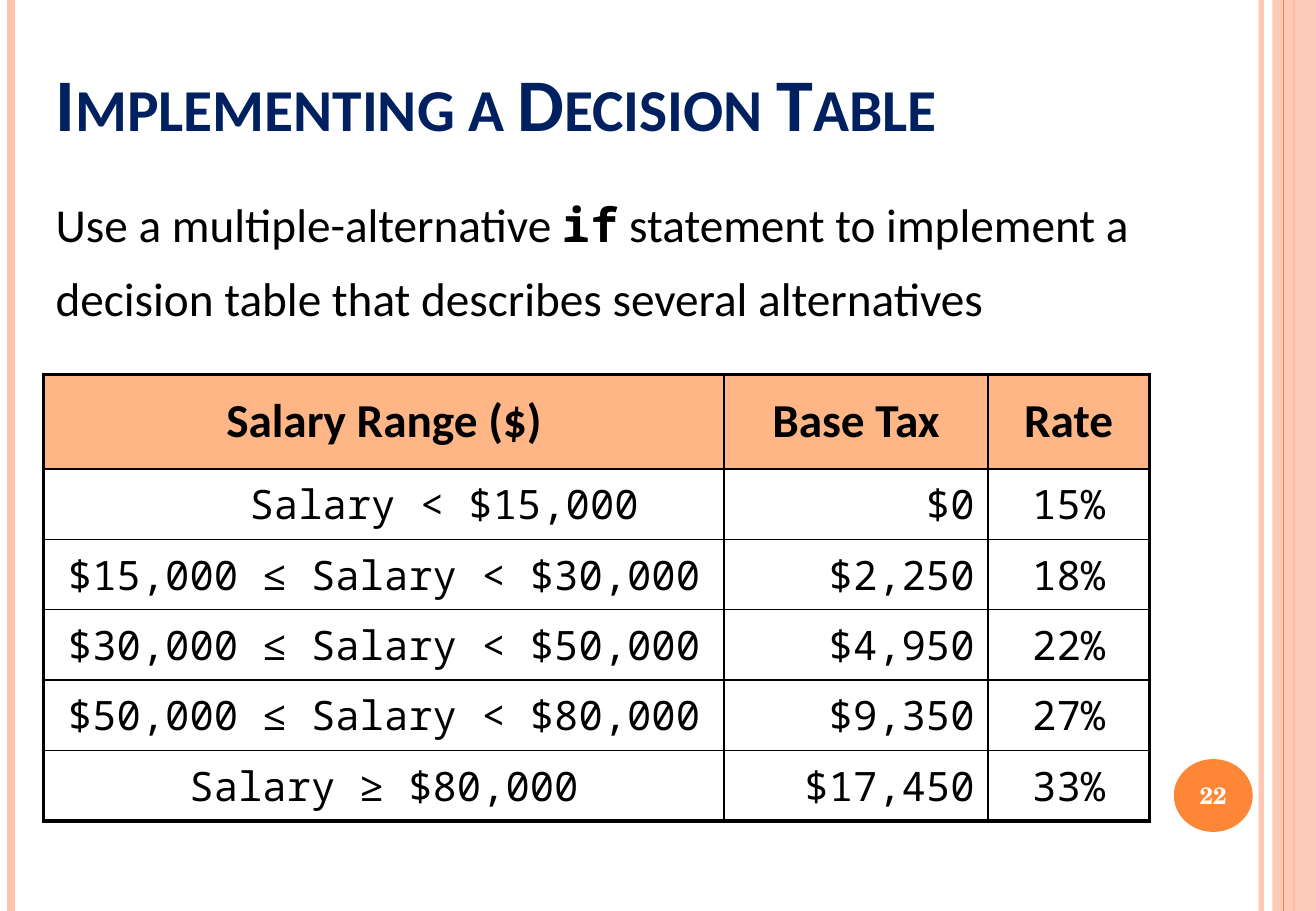
from dataclasses import dataclass

from lxml import etree
from pptx import Presentation
from pptx.dml.color import RGBColor
from pptx.enum.shapes import MSO_CONNECTOR as Connector, MSO_SHAPE as Shape
from pptx.enum.text import MSO_ANCHOR as Anchor, PP_ALIGN as Align
from pptx.oxml.ns import qn
from pptx.util import Inches, Pt


@dataclass(frozen=True)
class Theme:
    ink: str = "000000"
    paper: str = "FFFFFF"
    navy: str = "002060"
    orange: str = "FE8637"
    blush: str = "FEC3AE"
    peach: str = "FEB687"
    sans: str = "Calibri"
    mono: str = "Noto Sans Mono"
    serif: str = "TeX Gyre Schola"
    title_size: float = 44
    body_size: float = 28
    entry_size: float = 24
    number_size: float = 14
    outer_rule: float = 2.25
    inner_rule: float = 1


THEME = Theme()
WIDTH, HEIGHT = Inches(10.83), Inches(7.5)
LEFT = 3.32  # shared left edge, percent of the width

HEADINGS = ["Salary Range ($)", "Base Tax", "Rate"]
BRACKETS = [
    ("Salary < $15,000", "$0", "15%"),
    ("$15,000 ≤ Salary < $30,000", "$2,250", "18%"),
    ("$30,000 ≤ Salary < $50,000", "$4,950", "22%"),
    ("$50,000 ≤ Salary < $80,000", "$9,350", "27%"),
    ("Salary ≥ $80,000", "$17,450", "33%"),
]
COLUMN_SHARES = [51.71, 20.04, 12.28]
COLUMN_ALIGNS = [Align.CENTER, Align.RIGHT, Align.CENTER]
HEADING_SHARE, BRACKET_SHARE = 10.4, 7.73
FIRST_RANGE_INDENT = Inches(1.1)


def across(percent):
    return round(WIDTH * percent / 100)


def down(percent):
    return round(HEIGHT * percent / 100)


def area(left, top, width, height):
    return across(left), down(top), across(width), down(height)


def style(run, font, size, color, bold=False):
    run.font.name, run.font.size, run.font.bold = font, Pt(size), bold
    run.font.color.rgb = RGBColor.from_string(color)


def set_opacity(fill_owner, percent):
    color = next(fill_owner.iter(qn("a:srgbClr")))
    etree.SubElement(color, qn("a:alpha")).set("val", str(percent * 1000))


def add_stripe(slide, x, color, weight, opacity=100):
    """Vertical line over the full height of the slide."""
    stripe = slide.shapes.add_connector(
        Connector.STRAIGHT, across(x), 0, across(x), HEIGHT)
    stripe.line.color.rgb = RGBColor.from_string(color)
    stripe.line.width = Pt(weight)
    properties = stripe._element.spPr
    if opacity < 100:
        set_opacity(properties, opacity)
    etree.SubElement(properties, qn("a:effectLst"))


def add_solid(slide, kind, place, color):
    solid = slide.shapes.add_shape(kind, *area(*place))
    solid.shadow.inherit = False
    solid.fill.solid()
    solid.fill.fore_color.rgb = RGBColor.from_string(color)
    solid.line.fill.background()
    return solid


def add_paragraph_box(slide, place, anchor=Anchor.TOP):
    frame = slide.shapes.add_textbox(*area(*place)).text_frame
    frame.word_wrap = True
    frame.vertical_anchor = anchor
    return frame.paragraphs[0]


def add_decoration(slide):
    add_stripe(slide, 95.84, THEME.blush, 3, opacity=93)
    add_stripe(slide, 0.83, THEME.blush, 4.5)
    add_stripe(slide, 98.34, THEME.orange, 1.5)
    band = add_solid(slide, Shape.RECTANGLE, (96.68, 0, LEFT, 100), THEME.blush)
    set_opacity(band._element.spPr, 87)
    add_stripe(slide, 97.51, THEME.orange, 0.75)


def add_slide_number(slide, number):
    badge = add_solid(slide, Shape.OVAL, (89.2, 83.33, 6, 8), THEME.orange)
    frame = badge.text_frame
    frame.margin_left = frame.margin_right = 0
    frame.vertical_anchor = Anchor.MIDDLE
    label = frame.paragraphs[0]
    label.text = number
    label.alignment = Align.CENTER
    style(label.runs[0], THEME.serif, THEME.number_size, THEME.paper, bold=True)


def add_title(slide, wording):
    title = add_paragraph_box(slide, (LEFT, 4, 81.72, 12.67), Anchor.BOTTOM)
    title.text = wording
    style(title.runs[0], THEME.sans, THEME.title_size, THEME.navy, bold=True)
    title.runs[0].font._element.set("cap", "small")


def add_statement(slide, before, keyword, after):
    statement = add_paragraph_box(slide, (LEFT, 18.93, 88.37, 18.93))
    statement.line_spacing, statement.space_before = 1.3, Pt(6)
    for wording in (before, keyword, after):
        run = statement.add_run()
        run.text = wording
        is_code = wording == keyword
        style(run, THEME.mono if is_code else THEME.sans,
              THEME.body_size, THEME.ink, bold=is_code)


def set_borders(cell, outer_sides):
    """Rule all four sides, heavier on the rim of the table."""
    properties = cell._tc.get_or_add_tcPr()
    for order, side in enumerate("LRTB"):
        weight = THEME.outer_rule if side in outer_sides else THEME.inner_rule
        rule = etree.Element(qn(f"a:ln{side}"), w=str(Pt(weight)))
        ink = etree.SubElement(rule, qn("a:solidFill"))
        etree.SubElement(ink, qn("a:srgbClr")).set("val", THEME.ink)
        properties.insert(order, rule)


def fill_cell(cell, wording, align, is_heading):
    cell.text = wording
    cell.vertical_anchor = Anchor.MIDDLE
    cell.margin_left = cell.margin_right = Inches(0.11)
    entry = cell.text_frame.paragraphs[0]
    if is_heading:
        entry.alignment = Align.CENTER
        style(entry.runs[0], THEME.sans, THEME.body_size, THEME.ink, bold=True)
        cell.fill.solid()
        cell.fill.fore_color.rgb = RGBColor.from_string(THEME.peach)
    else:
        entry.alignment = align
        style(entry.runs[0], THEME.mono, THEME.entry_size, THEME.ink)
        cell.fill.background()


def add_tax_table(slide):
    entries = [HEADINGS, *BRACKETS]
    row_shares = [HEADING_SHARE] + [BRACKET_SHARE] * len(BRACKETS)
    place = (LEFT, 41.07, sum(COLUMN_SHARES), sum(row_shares))
    taxes = slide.shapes.add_table(
        len(entries), len(HEADINGS), *area(*place)).table
    taxes.first_row = taxes.horz_banding = False
    for column, share in zip(taxes.columns, COLUMN_SHARES):
        column.width = across(share)
    for row, share in zip(taxes.rows, row_shares):
        row.height = down(share)
    last_row, last_column = len(entries) - 1, len(HEADINGS) - 1
    for r, wordings in enumerate(entries):
        for c, wording in enumerate(wordings):
            cell = taxes.cell(r, c)
            fill_cell(cell, wording, COLUMN_ALIGNS[c], is_heading=r == 0)
            rim = {"L": c == 0, "R": c == last_column,
                   "T": r == 0, "B": r == last_row}
            set_borders(cell, [side for side, outer in rim.items() if outer])
    # Line up the first range with the upper limits below it
    taxes.cell(1, 0).margin_left = FIRST_RANGE_INDENT


def main():
    deck = Presentation()
    deck.slide_width, deck.slide_height = WIDTH, HEIGHT
    slide = deck.slides.add_slide(deck.slide_layouts[6])
    # Edge stripes and page badge
    add_decoration(slide)
    add_slide_number(slide, "22")
    # Content
    add_title(slide, "Implementing a Decision Table")
    add_statement(
        slide, "Use a multiple-alternative ", "if",
        " statement to implement a decision table"
        " that describes several alternatives")
    add_tax_table(slide)
    deck.save("out.pptx")


if __name__ == "__main__":
    main()
